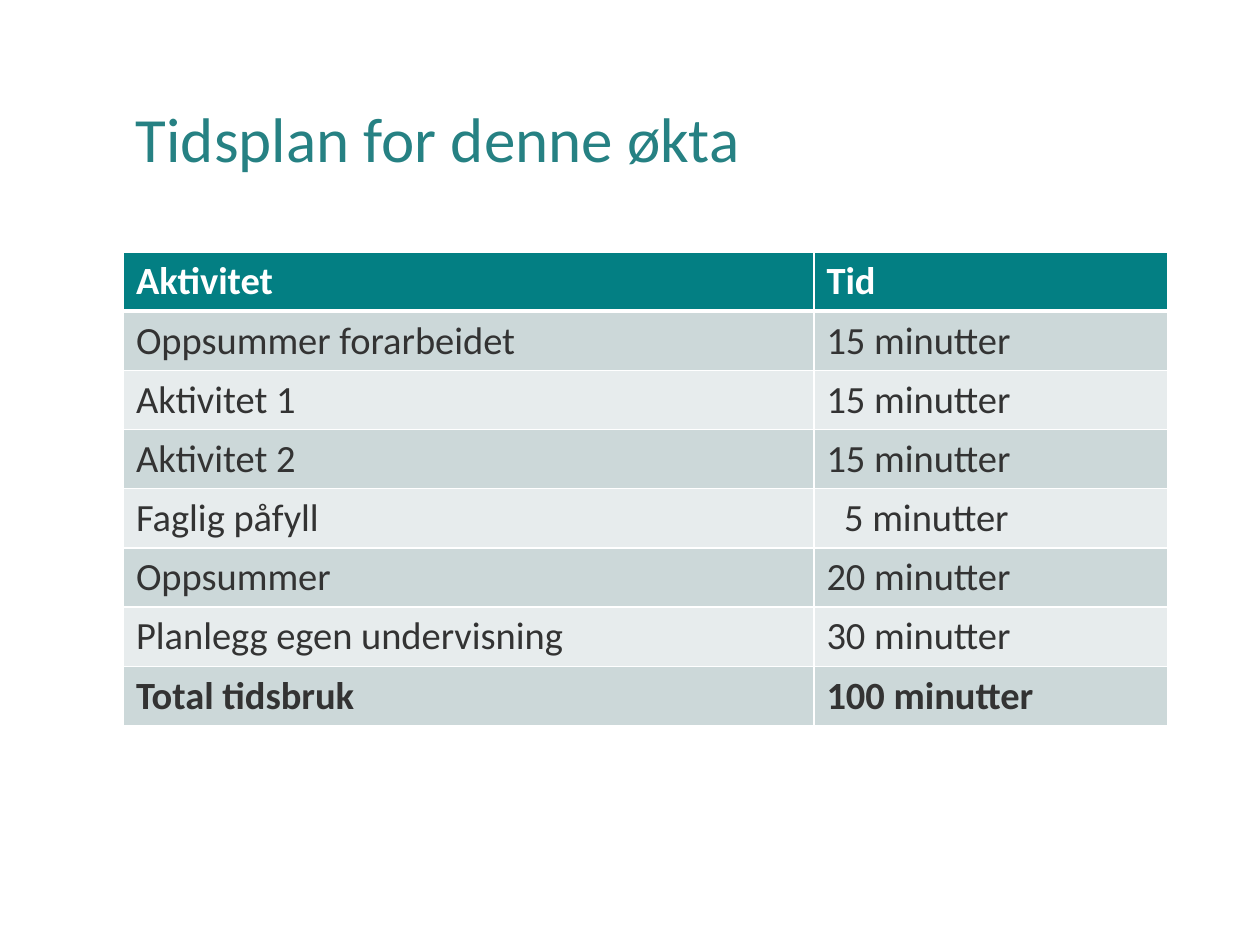
from lxml import etree
from pptx import Presentation
from pptx.dml.color import RGBColor
from pptx.enum.text import MSO_ANCHOR as Anchor
from pptx.oxml.ns import qn
from pptx.util import Inches, Pt

COLORS = {
    "title": "268183",
    "header": "037F83",
    "dark_band": "CCD8D9",
    "light_band": "E7ECED",
    "text": "333333",
    "white": "FFFFFF",
}
FONT = "Calibri"
LEFT, WIDTH = 0.98, 8.29
COLUMN_WIDTHS = (5.48, 2.81)
ROW_HEIGHT = 0.47
CELL_MARGIN = 0.1
DIGIT_INDENT = 0.14
SCHEDULE = [
    ("Aktivitet", "Tid"),
    ("Oppsummer forarbeidet", "15 minutter"),
    ("Aktivitet 1", "15 minutter"),
    ("Aktivitet 2", "15 minutter"),
    ("Faglig påfyll", "5 minutter"),
    ("Oppsummer", "20 minutter"),
    ("Planlegg egen undervisning", "30 minutter"),
    ("Total tidsbruk", "100 minutter"),
]


def rgb(name):
    return RGBColor.from_string(COLORS[name])


def write_text(frame, text, size=22, color="text", bold=False, spacing=1.0):
    para = frame.paragraphs[0]
    para.line_spacing = spacing
    span = para.add_run()
    span.text = text
    span.font.name = FONT
    span.font.size = Pt(size)
    span.font.bold = bold
    span.font.color.rgb = rgb(color)


def set_borders(cell, top=1, bottom=1):
    """Draw white lines round a cell; widths are in points."""
    properties = cell._tc.get_or_add_tcPr()
    widths = {"a:lnL": 1, "a:lnR": 1, "a:lnT": top, "a:lnB": bottom}
    for index, (tag, width) in enumerate(widths.items()):
        line = etree.Element(qn(tag), w=str(Pt(width)))
        fill = etree.SubElement(line, qn("a:solidFill"))
        etree.SubElement(fill, qn("a:srgbClr"), val=COLORS["white"])
        properties.insert(index, line)


def add_title(page, text):
    box = page.shapes.add_textbox(Inches(LEFT), Inches(0.4), Inches(WIDTH), Inches(1.45))
    frame = box.text_frame
    frame.word_wrap = True
    frame.vertical_anchor = Anchor.MIDDLE
    write_text(frame, text, size=36, color="title", spacing=0.9)


def add_schedule(page, rows):
    table = page.shapes.add_table(
        len(rows), len(COLUMN_WIDTHS), Inches(LEFT), Inches(2),
        Inches(WIDTH), Inches(ROW_HEIGHT * len(rows)),
    ).table
    for column, width in zip(table.columns, COLUMN_WIDTHS):
        column.width = Inches(width)
    for r, row in enumerate(rows):
        table.rows[r].height = Inches(ROW_HEIGHT)
        is_header, is_total = r == 0, r == len(rows) - 1
        band = "header" if is_header else "dark_band" if r % 2 else "light_band"
        for c, text in enumerate(row):
            cell = table.cell(r, c)
            cell.fill.solid()
            cell.fill.fore_color.rgb = rgb(band)
            set_borders(cell, top=3 if r == 1 else 1, bottom=3 if is_header else 1)
            # Single-digit times are indented towards the two-digit ones.
            indent = DIGIT_INDENT if text.startswith("5 ") else 0
            cell.margin_left = Inches(CELL_MARGIN + indent)
            write_text(cell.text_frame, text, bold=is_header or is_total,
                       color="white" if is_header else "text")


def main():
    deck = Presentation()
    deck.slide_width, deck.slide_height = Inches(10), Inches(7.5)
    page = deck.slides.add_slide(deck.slide_layouts[6])
    add_title(page, "Tidsplan for denne økta")
    add_schedule(page, SCHEDULE)
    deck.save("out.pptx")


if __name__ == "__main__":
    main()
